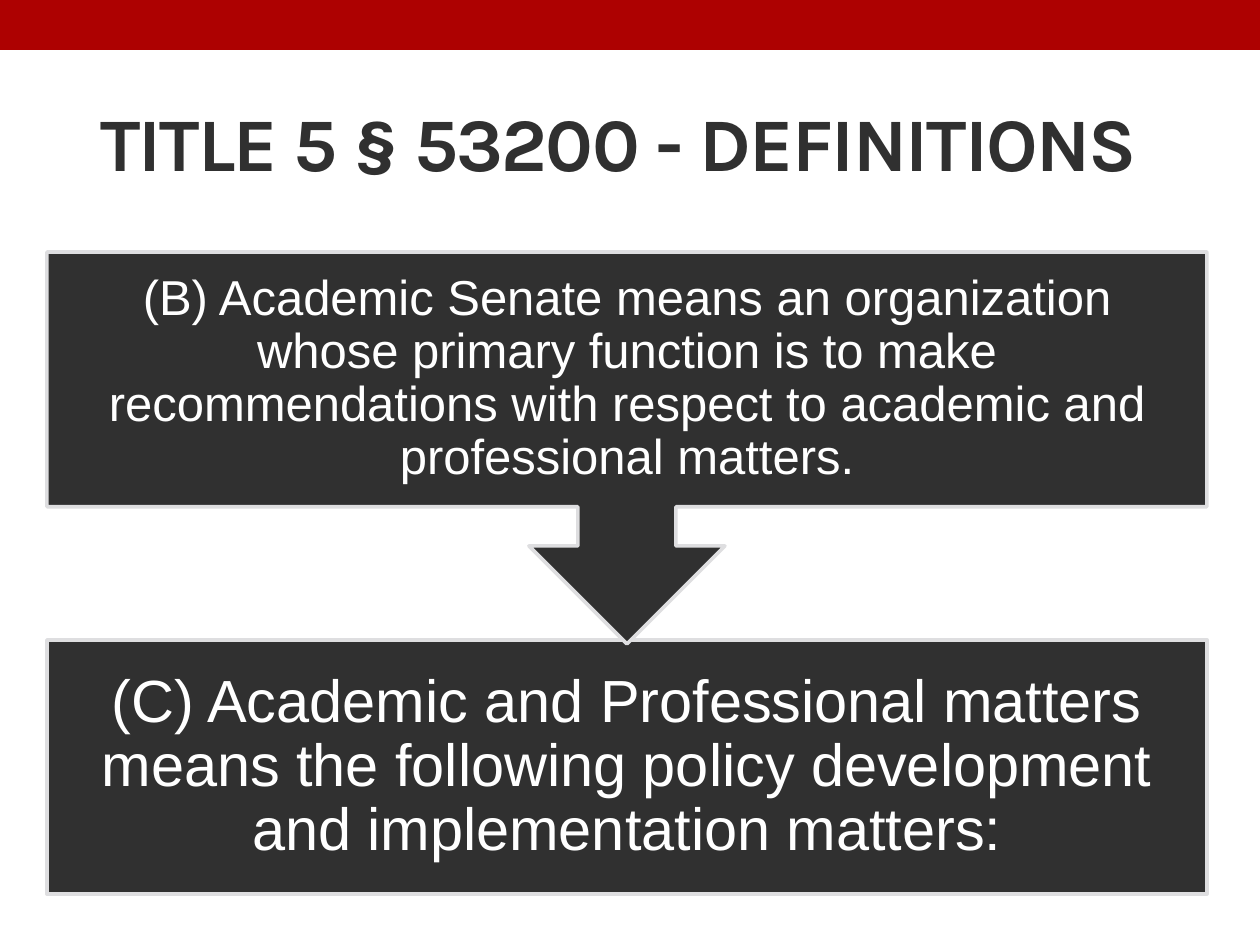
from pptx import Presentation
from pptx.dml.color import RGBColor
from pptx.enum.shapes import MSO_SHAPE
from pptx.enum.text import MSO_ANCHOR, MSO_AUTO_SIZE, PP_ALIGN
from pptx.util import Emu, Pt

RECTANGLE = MSO_SHAPE.RECTANGLE
DOWN_CALLOUT = MSO_SHAPE.DOWN_ARROW_CALLOUT
MIDDLE = MSO_ANCHOR.MIDDLE
NO_AUTOFIT = MSO_AUTO_SIZE.NONE
LEFT, CENTER = PP_ALIGN.LEFT, PP_ALIGN.CENTER

RED = RGBColor(0xAD, 0x01, 0x01)
CHARCOAL = RGBColor(0x30, 0x30, 0x30)
SILVER = RGBColor(0xDE, 0xDE, 0xE0)
WHITE = RGBColor(0xFF, 0xFF, 0xFF)

SLIDE_WIDTH, SLIDE_HEIGHT = 1260, 945
TITLE_ONLY = 5


def px(length):
    return Emu(round(length * 914400 / 126))


def write(frame, text, *, size, font, color, bold=False, align=CENTER,
          line_spacing=None, tracking=None, inset_x=13, inset_y=6):
    """Fill a text frame with one formatted paragraph, centred vertically."""
    frame.word_wrap = True
    frame.auto_size = NO_AUTOFIT
    frame.vertical_anchor = MIDDLE
    frame.margin_left = frame.margin_right = px(inset_x)
    frame.margin_top = frame.margin_bottom = px(inset_y)
    paragraph = frame.paragraphs[0]
    paragraph.alignment = align
    if line_spacing:
        paragraph.line_spacing = line_spacing
    run = paragraph.add_run()
    run.text = text
    run.font.size = Pt(size)
    run.font.name = font
    run.font.bold = bold
    run.font.color.rgb = color
    if tracking:
        run._r.get_or_add_rPr().set("spc", str(tracking))


class DefinitionSlide:
    heading_font = "Karla"
    body_font = "Arial"

    def __init__(self, slide):
        self.slide = slide

    def title(self, text, left, top, width, height):
        heading = self.slide.shapes.title
        heading.left, heading.top = px(left), px(top)
        heading.width, heading.height = px(width), px(height)
        write(heading.text_frame, text, size=43.2, font=self.heading_font,
              color=CHARCOAL, bold=True, align=LEFT, tracking=-100)

    def block(self, kind, left, top, width, height, fill, outline=None):
        block = self.slide.shapes.add_shape(
            kind, px(left), px(top), px(width), px(height))
        block.shadow.inherit = False
        block.fill.solid()
        block.fill.fore_color.rgb = fill
        if outline is None:
            block.line.fill.background()
        else:
            block.line.color.rgb = outline
            block.line.width = Pt(2.08)
        return block

    def definition(self, kind, text, top, height, size, inset_x):
        panel = self.block(kind, 47, top, 1160, height, CHARCOAL, SILVER)
        write(panel.text_frame, text, size=size, font=self.body_font,
              color=WHITE, line_spacing=0.9, inset_x=inset_x, inset_y=20)
        return panel


def main():
    deck = Presentation()
    deck.slide_width, deck.slide_height = px(SLIDE_WIDTH), px(SLIDE_HEIGHT)
    page = DefinitionSlide(deck.slides.add_slide(deck.slide_layouts[TITLE_ONLY]))

    # Top band and heading
    page.block(RECTANGLE, 0, 0, SLIDE_WIDTH, 50, RED)
    page.title("TITLE 5 § 53200 - DEFINITIONS", 87, 50, 1086, 183)

    # Second definition sits behind the tip of the arrow
    page.definition(
        RECTANGLE,
        "(C) Academic and Professional matters means the following policy "
        "development and implementation matters:",
        top=640, height=254, size=34, inset_x=33)

    # First definition, pointing down to the second
    senate = page.definition(
        DOWN_CALLOUT,
        "(B) Academic Senate means an organization whose primary function is "
        "to make recommendations with respect to academic and professional "
        "matters.",
        top=252, height=392, size=28, inset_x=28)
    for index, ratio in enumerate((0.25, 0.25, 0.25, 0.65)):
        senate.adjustments[index] = ratio

    deck.save("out.pptx")


if __name__ == "__main__":
    main()
